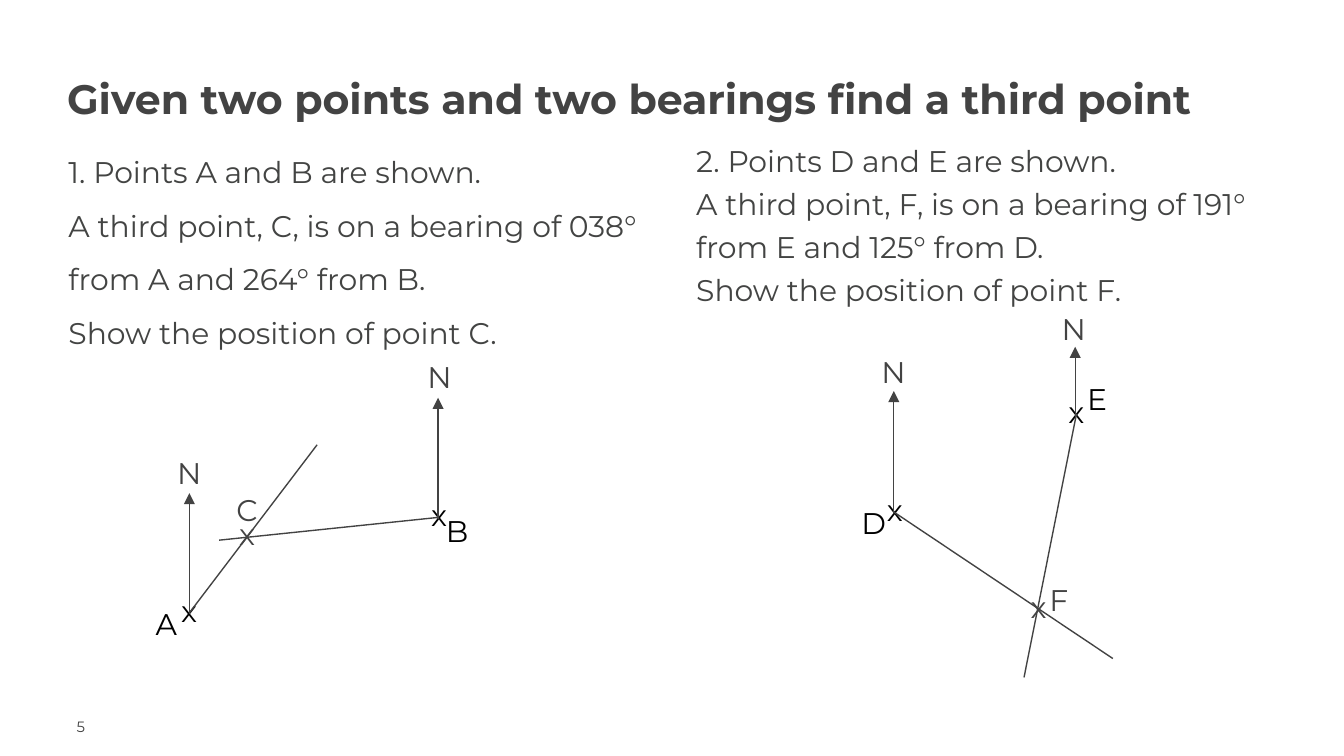
from lxml import etree
from pptx import Presentation
from pptx import util as u
from pptx.dml.color import RGBColor
from pptx.enum import shapes, text
from pptx.oxml.ns import qn

COLOURS = {"ink": "434343", "body": "434443", "given": "000000"}
LETTER_SIZE = (22.3, 26.6)


class BearingSlide:
    """Draws text, letters and lines in one style on the current slide."""

    font = "Montserrat"
    line_width = 0.75

    def __init__(self, deck):
        self.slide = deck.slides.add_slide(deck.slide_layouts[6])

    def wording(self, paragraphs, place, size, colour="ink", bold=False, spacing=1.0, insets=(0, 0)):
        box = self.slide.shapes.add_textbox(*map(u.Pt, place))
        frame = box.text_frame
        across, down = map(u.Pt, insets)
        frame_format = {
            "word_wrap": True,
            "auto_size": text.MSO_AUTO_SIZE.NONE,
            "vertical_anchor": text.MSO_ANCHOR.TOP,
            "margin_left": across,
            "margin_right": across,
            "margin_top": down,
            "margin_bottom": down,
        }
        for name, value in frame_format.items():
            setattr(frame, name, value)
        frame.text = "\n".join(paragraphs)
        font_format = {"name": self.font, "size": u.Pt(size), "bold": bold}
        for paragraph in frame.paragraphs:
            paragraph.line_spacing = spacing
            for run in paragraph.runs:
                for name, value in font_format.items():
                    setattr(run.font, name, value)
                run.font.color.rgb = RGBColor.from_string(COLOURS[colour])

    def letter(self, character, corner, colour="ink"):
        self.wording([character], (*corner, *LETTER_SIZE), 16, colour, insets=(7.2, 3.6))

    def line(self, start, end, arrow=False):
        ray = self.slide.shapes.add_connector(
            shapes.MSO_CONNECTOR.STRAIGHT, *map(u.Pt, (*start, *end))
        )
        ray.line.width = u.Pt(self.line_width)
        ray.line.color.rgb = RGBColor.from_string(COLOURS["ink"])
        properties = ray.element.spPr
        if arrow:
            etree.SubElement(properties.find(qn("a:ln")), qn("a:tailEnd"), type="triangle")
        etree.SubElement(properties, qn("a:effectLst"))

    def point(self, name, cross, label, colour):
        self.letter("x", cross, colour)
        self.letter(name, label, colour)

    def north(self, foot, tip, label):
        self.line(foot, (foot[0], tip), arrow=True)
        self.letter("N", label)


def main():
    deck = Presentation()
    deck.slide_width, deck.slide_height = u.Pt(720), u.Pt(405)
    page = BearingSlide(deck)

    page.wording(
        ["Given two points and two bearings find a third point"],
        (36, 35.3, 635.8, 37.4), 22, bold=True, spacing=1.15,
    )
    questions = [
        (36.7, 321.1, 1.5, [
            "1. Points A and B are shown.",
            "A third point, C, is on a bearing of 038° from A and 264° from B.",
            "Show the position of point C.",
        ]),
        (373, 331.2, 1.2, [
            "2. Points D and E are shown.",
            "A third point, F, is on a bearing of 191° from E and 125° from D.",
            "Show the position of point F.",
        ]),
    ]
    for left, width, spacing, question in questions:
        page.wording(question, (left, 72.7, width, 311.8), 16, "body", spacing=spacing)
    page.wording(["5"], (41, 384.5, 56.9, 14.4), 8)

    points = [
        ("A", (90, 313.9), (76.3, 321.1), "given"),
        ("B", (223.9, 262.8), (231.8, 271.4), "given"),
        ("C", (121, 272.9), (119.5, 259.9), "ink"),
        ("D", (468, 259.9), (454.3, 267.1), "given"),
        ("E", (565.2, 207.4), (575.3, 200.2), "given"),
        ("F", (545, 311.8), (555.1, 308.2), "ink"),
    ]
    for point in points:
        page.point(*point)

    norths = [
        ((101.5, 329), 264.2, (87.8, 239.8)),
        ((234.7, 277.9), 213.1, (221.8, 188.6)),
        ((478.8, 275), 209.5, (465.1, 185.8)),
        ((576, 223.9), 185.8, (561.6, 162.7)),
    ]
    for north in norths:
        page.north(*north)

    bearings = [
        ((101.5, 328.3), (169.9, 238.3)),
        ((234.7, 277.2), (117.4, 289.4)),
        ((576.7, 221.8), (548.6, 362.9)),
        ((478.8, 274.3), (596.2, 352.8)),
    ]
    for start, end in bearings:
        page.line(start, end)

    deck.save("out.pptx")


if __name__ == "__main__":
    main()
